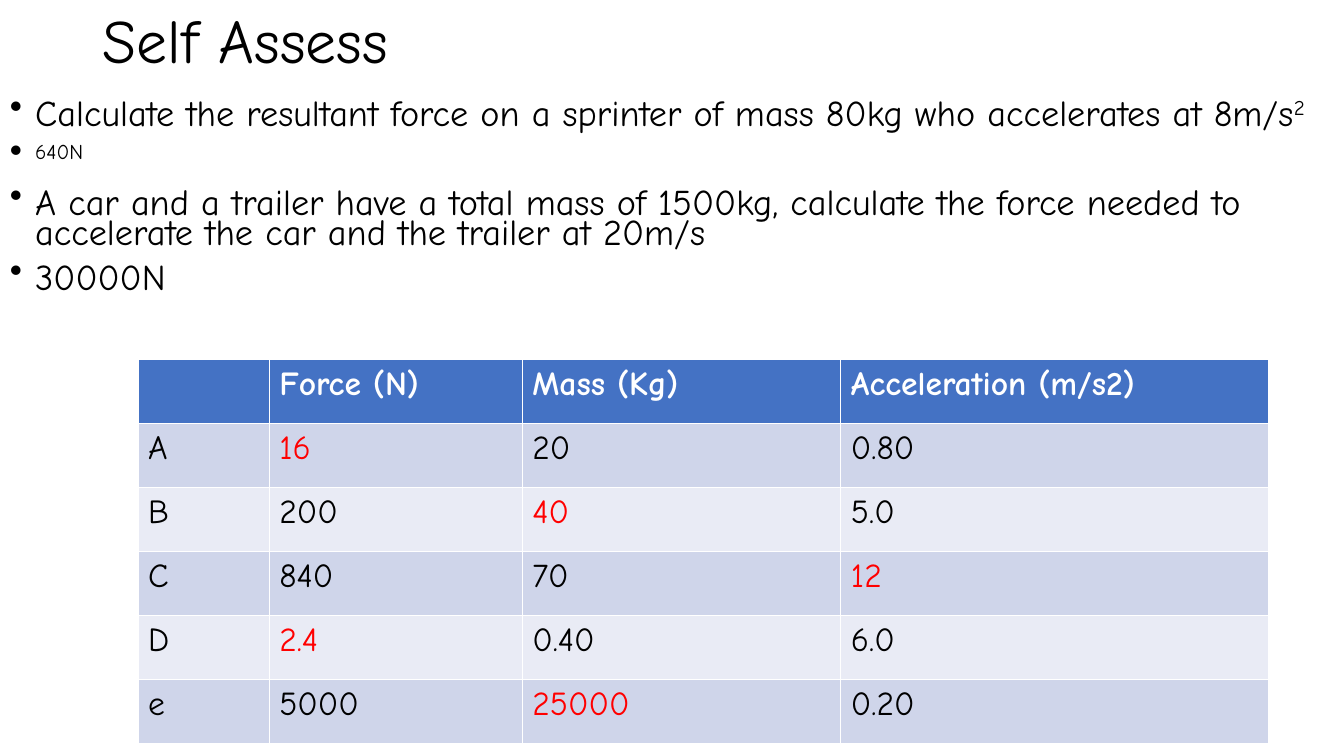
from dataclasses import dataclass

from lxml import etree
from pptx import Presentation
from pptx.dml.color import RGBColor
from pptx.enum.text import MSO_ANCHOR, MSO_AUTO_SIZE, PP_ALIGN
from pptx.oxml.ns import qn
from pptx.util import Inches, Pt

LEFT = PP_ALIGN.LEFT
MIDDLE = MSO_ANCHOR.MIDDLE
NO_FIT = MSO_AUTO_SIZE.NONE


@dataclass(frozen=True)
class Theme:
    font: str = "Comic Neue"
    title_size: float = 44
    body_size: float = 25.9
    table_size: float = 24
    ink: str = "000000"
    answer: str = "FF0000"
    header_ink: str = "FFFFFF"
    header_fill: str = "4472C4"
    bands: tuple = ("CFD5EA", "E9EBF5")


theme = Theme()


def style(para, size, colour, bold=False):
    """Apply the slide's font to a whole paragraph."""
    font = para.font
    font.name, font.size, font.bold = theme.font, Pt(size), bold
    font.color.rgb = RGBColor.from_string(colour)


def add_bullet(para, indent):
    """Give a paragraph a round bullet with a hanging indent."""
    properties = para._p.get_or_add_pPr()
    properties.set("marL", str(indent))
    properties.set("indent", str(-indent))
    # The bullet has to come before the default run properties.
    bullet = etree.Element(qn("a:buChar"), char="•")
    properties.find(qn("a:defRPr")).addprevious(bullet)


deck = Presentation()
deck.slide_width, deck.slide_height = Inches(13.33), Inches(7.5)
page = deck.slides.add_slide(deck.slide_layouts[5])

# Title
title = page.shapes.title
title.left, title.top = Inches(0.92), Inches(0.02)
title.width, title.height = Inches(11.5), Inches(0.82)
frame = title.text_frame
frame.text = "Self Assess"
frame.auto_size = NO_FIT
frame.vertical_anchor = MIDDLE
para = frame.paragraphs[0]
para.alignment, para.line_spacing = LEFT, 0.9
style(para, theme.title_size, theme.ink)

# Questions and answers: each bullet is a list of (text, raised) spans
bullets = [
    [("Calculate the resultant force on a sprinter of mass 80kg "
      "who accelerates at 8m/s", False), ("2", True)],
    [("640N", True)],
    [("A car and a trailer have a total mass of 1500kg, calculate the force "
      "needed to accelerate the car and the trailer at 20m/s", False)],
    [("30000N", False)],
]
box = page.shapes.add_textbox(0, Inches(0.96), deck.slide_width, Inches(2.48))
frame = box.text_frame
frame.word_wrap = True
for index, spans in enumerate(bullets):
    para = frame.add_paragraph() if index else frame.paragraphs[0]
    para.line_spacing, para.space_before = 0.7, Pt(10)
    style(para, theme.body_size, theme.ink)
    add_bullet(para, Inches(0.25))
    for text, raised in spans:
        span = para.add_run()
        span.text = text
        if raised:
            span._r.get_or_add_rPr().set("baseline", "30000")

# Results table
rows = [
    ["", "Force (N)", "Mass (Kg)", "Acceleration (m/s2)"],
    ["A", "16", "20", "0.80"],
    ["B", "200", "40", "5.0"],
    ["C", "840", "70", "12"],
    ["D", "2.4", "0.40", "6.0"],
    ["e", "5000", "25000", "0.20"],
]
answer_columns = [None, 1, 2, 3, 1, 2]
column_widths = [1.3, 2.51, 3.16, 4.24]
table = page.shapes.add_table(
    len(rows), len(column_widths), Inches(1.37), Inches(3.57),
    Inches(sum(column_widths)), Inches(3.81)).table
for column, width in zip(table.columns, column_widths):
    column.width = Inches(width)

for row, (values, answer_column) in enumerate(zip(rows, answer_columns)):
    is_header = row == 0
    fill = theme.header_fill if is_header else theme.bands[(row - 1) % 2]
    for column, value in enumerate(values):
        cell = table.cell(row, column)
        cell.fill.solid()
        cell.fill.fore_color.rgb = RGBColor.from_string(fill)
        cell.text = value
        colour = theme.header_ink if is_header else theme.ink
        if column == answer_column:
            colour = theme.answer
        style(cell.text_frame.paragraphs[0], theme.table_size, colour, is_header)

deck.save("out.pptx")
